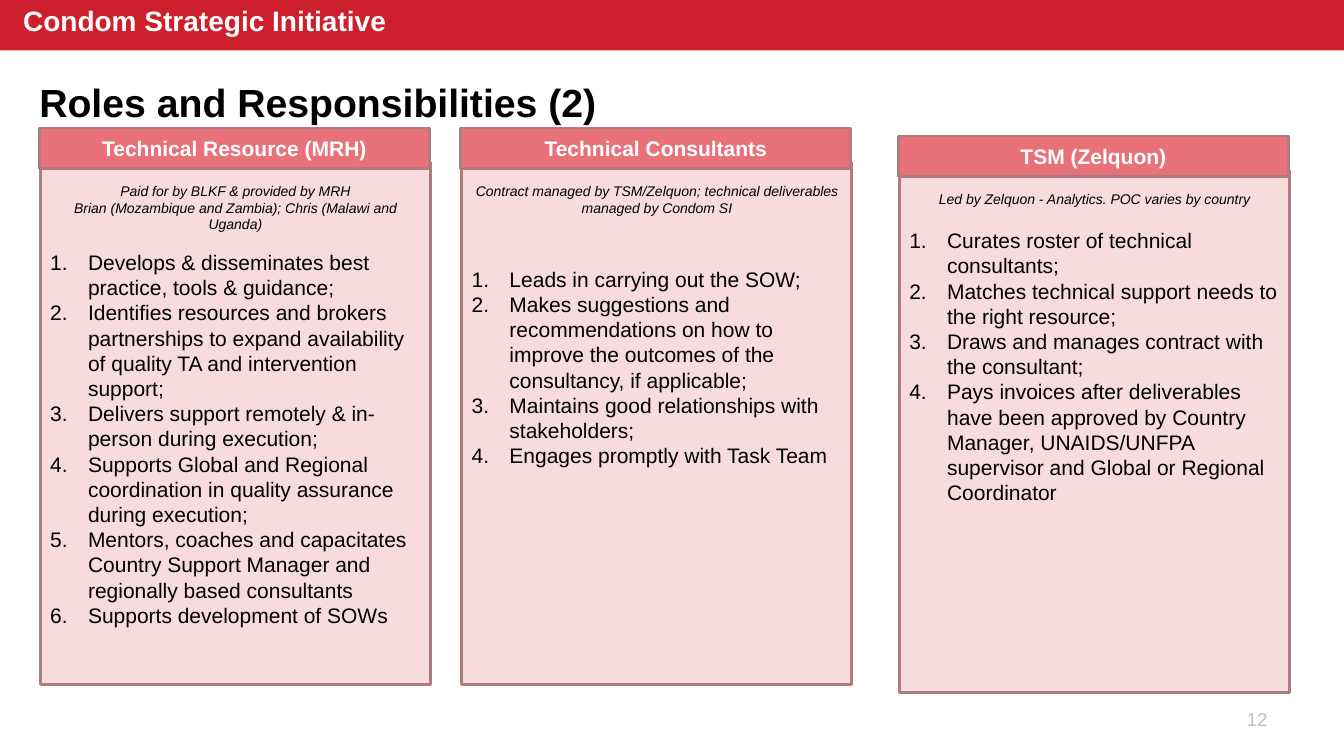
"""Build the Roles and Responsibilities slide with three role cards."""
from collections import namedtuple

from pptx import Presentation
from pptx.dml.color import RGBColor
from pptx.enum.shapes import MSO_SHAPE as Shape
from pptx.enum.text import MSO_ANCHOR as Anchor, MSO_AUTO_SIZE as AutoSize, PP_ALIGN as Align
from pptx.oxml.ns import qn
from pptx.util import Inches, Pt

Theme = namedtuple("Theme", "font red rose blush edge black white gray title banner body number note")
theme = Theme("Arial", "CD202C", "E9717A", "F7DBDD", "AE7B7F", "000000", "FFFFFF", "BFBFBF",
              28, 20, 15, 13.3, 10)

Card = namedtuple("Card", "left top heading notes gap duties")
cards = [
    Card(0.39, 1.27, "Technical Resource (MRH)",
         ["Paid for by BLKF & provided by MRH",
          "Brian (Mozambique and Zambia); Chris (Malawi and Uganda)"], 12,
         ["Develops & disseminates best practice, tools & guidance;",
          "Identifies resources and brokers partnerships to expand availability of quality TA "
          "and intervention support;",
          "Delivers support remotely & in-person during execution;",
          "Supports Global and Regional coordination in quality assurance during execution;",
          "Mentors, coaches and capacitates Country Support Manager and regionally based consultants",
          "Supports development of SOWs"]),
    Card(4.57, 1.27, "Technical Consultants",
         ["Contract managed by TSM/Zelquon; technical deliverables managed by Condom SI"], 36,
         ["Leads in carrying out the SOW;",
          "Makes suggestions and recommendations on how to improve the outcomes of the "
          "consultancy, if applicable;",
          "Maintains good relationships with stakeholders;",
          "Engages promptly with Task Team"]),
    Card(8.91, 1.35, "TSM (Zelquon)",
         ["Led by Zelquon - Analytics. POC varies by country"], 14.5,
         ["Curates roster of technical consultants;",
          "Matches technical support needs to the right resource;",
          "Draws and manages contract with the consultant;",
          "Pays invoices after deliverables have been approved by Country Manager, "
          "UNAIDS/UNFPA supervisor and Global or Regional Coordinator"]),
]
card_width, heading_height, body_height = 3.87, 0.4, 5.18
body_shift, body_drop = 0.01, 0.34


def write(para, text, size, color, align=Align.LEFT, bold=False, italic=False):
    para.text = text
    para.alignment = align
    for span in para.runs:
        span.font.name = theme.font
        span.font.size = Pt(size)
        span.font.bold = bold
        span.font.italic = italic
        span.font.color.rgb = RGBColor.from_string(color)


def add_panel(left, top, width, height, fill, edge=None):
    panel = page.shapes.add_shape(Shape.RECTANGLE, Inches(left), Inches(top), Inches(width), Inches(height))
    panel.shadow.inherit = False
    panel.fill.solid()
    panel.fill.fore_color.rgb = RGBColor.from_string(fill)
    if edge:
        panel.line.color.rgb = RGBColor.from_string(edge)
        panel.line.width = Pt(2)
    else:
        panel.line.fill.background()
    return panel


deck = Presentation()
deck.slide_width, deck.slide_height = Inches(13.33), Inches(7.5)
page = deck.slides.add_slide(deck.slide_layouts[5])

add_panel(0, 0, 13.33, 0.5, theme.red)

banner = page.shapes.add_textbox(Inches(0.13), Inches(-0.01), Inches(5.41), Inches(0.44))
banner.text_frame.word_wrap = True
write(banner.text_frame.paragraphs[0], "Condom Strategic Initiative", theme.banner, theme.white, bold=True)

number = page.shapes.add_textbox(Inches(9.56), Inches(6.93), Inches(3.11), Inches(0.4))
number.text_frame.word_wrap = True
number.text_frame.vertical_anchor = Anchor.MIDDLE
write(number.text_frame.paragraphs[0], "12", theme.number, theme.gray, Align.RIGHT)

title = page.shapes.title
title.left, title.top, title.width, title.height = Inches(0.39), Inches(0.73), Inches(11.76), Inches(0.61)
frame = title.text_frame
frame.auto_size = AutoSize.NONE
frame.vertical_anchor = Anchor.MIDDLE
frame.margin_left = frame.margin_top = frame.margin_right = 0
frame.margin_bottom = Inches(0.05)
write(frame.paragraphs[0], "Roles and Responsibilities (2)", theme.title, theme.black, bold=True)

for card in cards:
    body = add_panel(card.left + body_shift, card.top + body_drop, card_width, body_height,
                     theme.blush, theme.edge)
    frame = body.text_frame
    frame.word_wrap = True
    frame.vertical_anchor = Anchor.TOP
    frame.margin_top = Inches(0.2)
    for index, note in enumerate(card.notes):
        para = frame.add_paragraph() if index else frame.paragraphs[0]
        write(para, note, theme.note, theme.black, Align.CENTER, italic=True)
        para.line_spacing = Pt(12)
    for index, duty in enumerate(card.duties):
        para = frame.add_paragraph()
        properties = para._p.get_or_add_pPr()
        properties.set("marL", str(Pt(27)))
        properties.set("indent", str(-Pt(27)))
        bullet = properties.makeelement(qn("a:buAutoNum"), {"type": "arabicPeriod"})
        properties.append(bullet)
        write(para, duty, theme.body, theme.black)
        para.line_spacing = Pt(18)
        if index == 0:
            para.space_before = Pt(card.gap)

    heading = add_panel(card.left, card.top, card_width, heading_height, theme.rose, theme.edge)
    heading.text_frame.vertical_anchor = Anchor.MIDDLE
    write(heading.text_frame.paragraphs[0], card.heading, theme.body, theme.white, Align.CENTER, bold=True)

deck.save("out.pptx")
